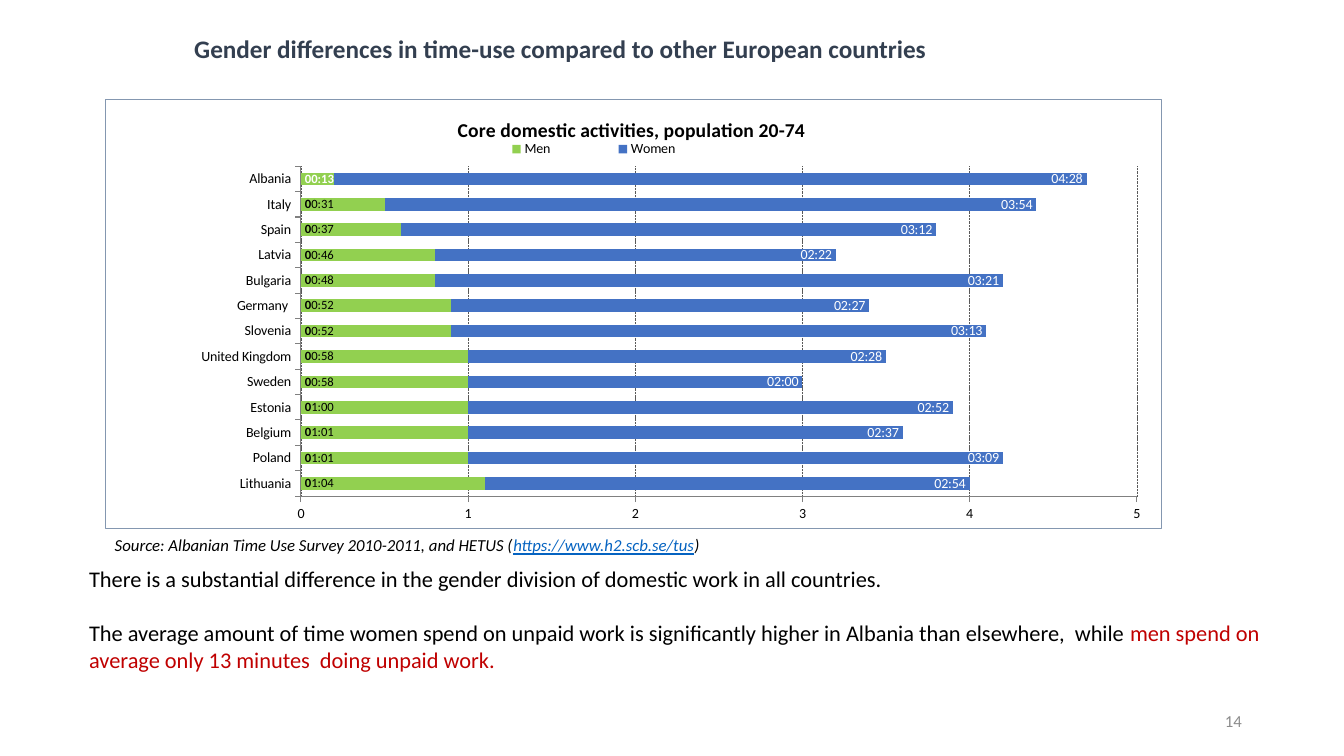
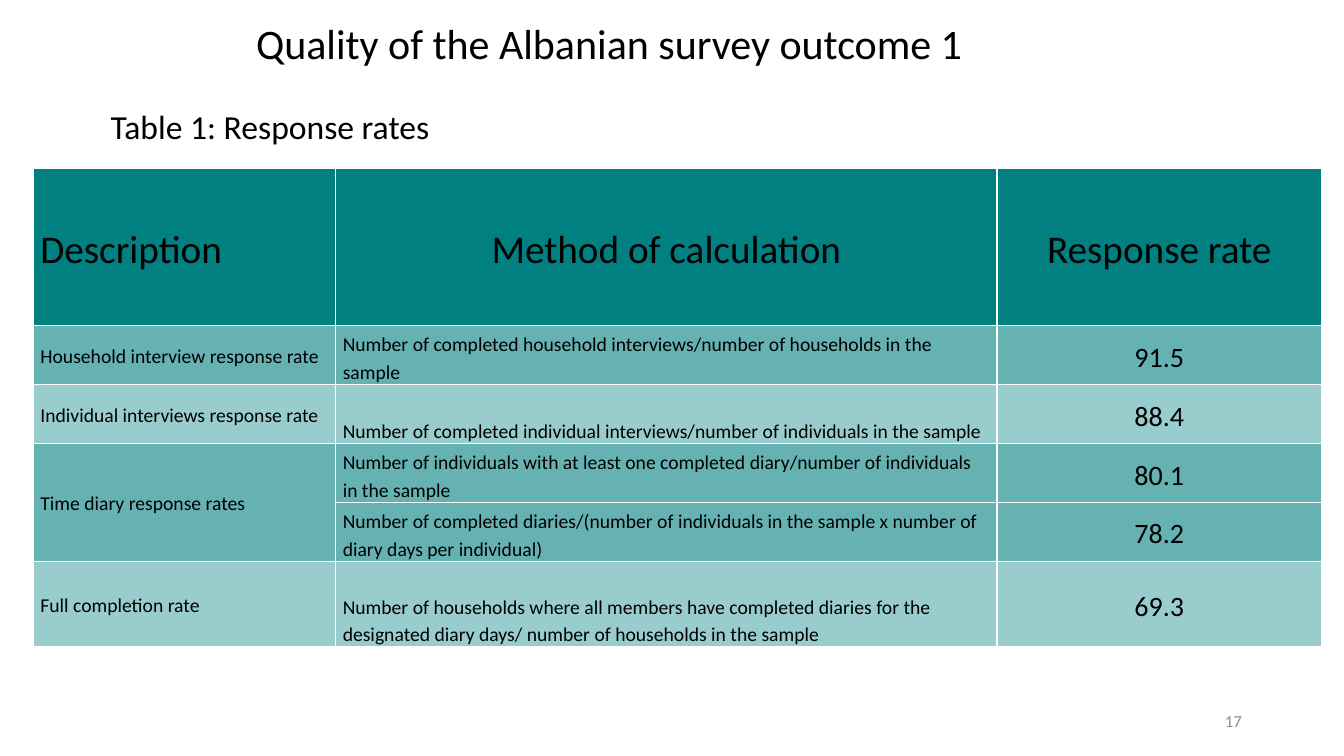
from dataclasses import dataclass
from typing import NamedTuple

import lxml.etree
import pptx
import pptx.chart.data
import pptx.dml.color
import pptx.enum.chart
import pptx.enum.dml
import pptx.enum.text
import pptx.oxml
import pptx.oxml.ns
import pptx.util

Align = pptx.enum.text.PP_ALIGN
Anchor = pptx.enum.text.MSO_ANCHOR
LabelPos = pptx.enum.chart.XL_LABEL_POSITION
qn = pptx.oxml.ns.qn
Pt = pptx.util.Pt


@dataclass(frozen=True)
class Theme:
    font: str = "Calibri"
    ink: str = "000000"
    white: str = "FFFFFF"
    slate: str = "333F50"
    muted: str = "8C8C8C"
    link: str = "0563C1"
    alert: str = "C00000"
    teal: str = "008080"
    men: str = "92D050"
    women: str = "4472C4"
    frame: str = "8497B0"
    axis: str = "808080"
    grid: str = "595959"
    label: float = 9
    chart: float = 10
    small: float = 12
    cell: float = 14
    body: float = 16
    heading: float = 18
    rate: float = 20
    caption: float = 24
    header: float = 28
    title: float = 30


THEME = Theme()


class Box(NamedTuple):
    """Left, top, width and height in percent of the slide."""
    x: float
    y: float
    w: float
    h: float


class Run(NamedTuple):
    text: str
    size: float
    color: str = THEME.ink
    bold: bool = False
    italic: bool = False
    underline: bool = False


class Country(NamedTuple):
    name: str
    men: float
    men_label: str
    women: float
    women_label: str


class Rate(NamedTuple):
    description: str
    method: str
    value: str
    opacity: int


PAGE_NUMBER = Box(70.65, 92.67, 22.5, 5.33)

COUNTRIES = [
    Country("Lithuania", 1.1, "01:04", 2.9, "02:54"),
    Country("Poland", 1, "01:01", 3.2, "03:09"),
    Country("Belgium", 1, "01:01", 2.6, "02:37"),
    Country("Estonia", 1, "01:00", 2.9, "02:52"),
    Country("Sweden", 1, "00:58", 2, "02:00"),
    Country("United Kingdom", 1, "00:58", 2.5, "02:28"),
    Country("Slovenia", 0.9, "00:52", 3.2, "03:13"),
    Country("Germany ", 0.9, "00:52", 2.5, "02:27"),
    Country("Bulgaria", 0.8, "00:48", 3.4, "03:21"),
    Country("Latvia", 0.8, "00:46", 2.4, "02:22"),
    Country("Spain", 0.6, "00:37", 3.2, "03:12"),
    Country("Italy", 0.5, "00:31", 3.9, "03:54"),
    Country("Albania", 0.2, "00:13", 4.5, "04:28"),
]

HEADERS = ("Description", "Method of calculation", "Response rate")
RATES = [
    Rate("Household interview response rate",
         "Number of completed household interviews/number of households in the sample", "91.5", 60),
    Rate("Individual interviews response rate",
         "Number of completed individual interviews/number of individuals in the sample", "88.4", 40),
    Rate("Time diary response rates",
         "Number of individuals with at least one completed diary/number of individuals in the sample",
         "80.1", 60),
    Rate("",
         "Number of completed diaries/(number of individuals in the sample x number of diary days "
         "per individual)", "78.2", 60),
    Rate("Full completion rate",
         "Number of households where all members have completed diaries for the designated diary "
         "days/ number of households in the sample", "69.3", 40),
]
COLUMNS = (22.5, 49.2, 24.15)
ROWS = (20.8, 7.8, 7.8, 7.8, 7.8, 11.33)


def rgb(color: str) -> pptx.dml.color.RGBColor:
    return pptx.dml.color.RGBColor.from_string(color)


def across(prs, share: float) -> int:
    return round(prs.slide_width * share / 100)


def down(prs, share: float) -> int:
    return round(prs.slide_height * share / 100)


def emu(prs, box: Box) -> tuple[int, int, int, int]:
    return across(prs, box.x), down(prs, box.y), across(prs, box.w), down(prs, box.h)


def style(font, run: Run) -> None:
    font.name, font.size = THEME.font, Pt(run.size)
    font.bold, font.italic, font.underline = run.bold, run.italic, run.underline
    font.color.rgb = rgb(run.color)


def write(p, *runs: Run, align=Align.LEFT) -> None:
    p.alignment = align
    for run in runs:
        r = p.add_run()
        r.text = run.text
        style(r.font, run)


def place(prs, sp, box: Box, anchor=Anchor.TOP, wrap: bool = True):
    """Move a text shape, fix its frame and return the frame."""
    sp.left, sp.top, sp.width, sp.height = emu(prs, box)
    tf = sp.text_frame
    tf.word_wrap = wrap
    tf.auto_size = pptx.enum.text.MSO_AUTO_SIZE.NONE
    tf.vertical_anchor = anchor
    return tf


def add_text(prs, s, box: Box, *runs: Run, align=Align.LEFT, anchor=Anchor.TOP, wrap=True) -> None:
    tf = place(prs, s.shapes.add_textbox(0, 0, 0, 0), box, anchor, wrap)
    write(tf.paragraphs[0], *runs, align=align)


def add_slide(prs, layout: int, number: str, box: Box, title: Run, anchor=Anchor.TOP):
    s = prs.slides.add_slide(prs.slide_layouts[layout])
    tf = place(prs, s.shapes.title, box, anchor)
    write(tf.paragraphs[0], title)
    add_text(prs, s, PAGE_NUMBER, Run(number, THEME.small, THEME.muted),
             align=Align.RIGHT, anchor=Anchor.MIDDLE)
    return s


def manual_layout(inner: bool = False, **shares: float):
    """Build a chart layout element from shares of the chart's size."""
    layout = lxml.etree.Element(qn("c:layout"))
    manual = lxml.etree.SubElement(layout, qn("c:manualLayout"))
    settings = {"layoutTarget": "inner"} if inner else {}
    settings |= {"xMode": "edge", "yMode": "edge", **shares}
    for tag, value in settings.items():
        lxml.etree.SubElement(manual, qn(f"c:{tag}")).set("val", str(value))
    return layout


def arrange_chart(chart) -> None:
    """Fix the title, plot and legend positions and frame the chart."""
    space = chart._chartSpace
    for old in space.xpath("c:chart/*/c:layout"):
        old.getparent().remove(old)
    space.xpath("c:chart/c:title/c:tx")[0].addnext(manual_layout(x=0.33, y=0.03))
    space.xpath("c:chart/c:plotArea")[0].insert(
        0, manual_layout(inner=True, x=0.185, y=0.155, w=0.792, h=0.77))
    space.xpath("c:chart/c:legend/c:legendPos")[0].addnext(
        manual_layout(x=0.325, y=0.085, w=0.275, h=0.06))
    space.xpath("c:chart")[0].addnext(pptx.oxml.parse_xml(
        f'<c:spPr {pptx.oxml.ns.nsdecls("c", "a")}>'
        f'<a:solidFill><a:srgbClr val="{THEME.white}"/></a:solidFill>'
        f'<a:ln w="{Pt(0.75)}"><a:solidFill><a:srgbClr val="{THEME.frame}"/></a:solidFill></a:ln>'
        '</c:spPr>'))


def label_point(series, index: int, position, *runs: Run) -> None:
    label = series.points[index].data_label
    write(label.text_frame.paragraphs[0], *runs, align=Align.CENTER)
    label.position = position


def add_time_chart(prs, s, box: Box) -> None:
    data = pptx.chart.data.CategoryChartData(number_format="0.0")
    data.categories = [c.name for c in COUNTRIES]
    data.add_series("Men", [c.men for c in COUNTRIES])
    data.add_series("Women", [c.women for c in COUNTRIES])
    chart = s.shapes.add_chart(
        pptx.enum.chart.XL_CHART_TYPE.BAR_STACKED, *emu(prs, box), data).chart
    style(chart.font, Run("", THEME.chart))
    chart.has_title = True
    write(chart.chart_title.text_frame.paragraphs[0],
          Run("Core domestic activities, population 20-74", THEME.cell, bold=True),
          align=Align.CENTER)
    chart.has_legend = True
    chart.legend.position = pptx.enum.chart.XL_LEGEND_POSITION.BOTTOM
    chart.legend.include_in_layout = False

    plot = chart.plots[0]
    plot.gap_width, plot.overlap, plot.vary_by_categories = 100, 100, False
    men, women = plot.series
    for series, color in ((men, THEME.men), (women, THEME.women)):
        series.format.fill.solid()
        series.format.fill.fore_color.rgb = rgb(color)
    for i, c in enumerate(COUNTRIES):
        if c.name == "Albania":
            runs = [Run(c.men_label, THEME.label, THEME.white, bold=True)]
        else:
            runs = [Run(c.men_label[0], THEME.label, bold=True), Run(c.men_label[1:], THEME.label)]
        label_point(men, i, LabelPos.INSIDE_BASE, *runs)
        label_point(women, i, LabelPos.INSIDE_END, Run(c.women_label, THEME.chart, THEME.white))

    values = chart.value_axis
    values.minimum_scale, values.maximum_scale, values.major_unit = 0, 5, 1
    values.tick_labels.number_format = "0"
    values.tick_labels.number_format_is_linked = False
    values.has_major_gridlines = True
    grid = values.major_gridlines.format.line
    grid.width, grid.color.rgb = Pt(0.25), rgb(THEME.grid)
    grid.dash_style = pptx.enum.dml.MSO_LINE.SQUARE_DOT
    for axis in (values, chart.category_axis):
        axis.major_tick_mark = pptx.enum.chart.XL_TICK_MARK.OUTSIDE
        axis.format.line.color.rgb = rgb(THEME.axis)
    arrange_chart(chart)


def fill_cell(cell, run: Run, opacity: int, align=Align.LEFT, anchor=Anchor.MIDDLE) -> None:
    cell.margin_left = cell.margin_right = pptx.util.Inches(0.07)
    cell.margin_top = cell.margin_bottom = 0
    cell.vertical_anchor = anchor
    tc_pr = cell._tc.get_or_add_tcPr()
    for side in "LRTB":
        tc_pr.append(pptx.oxml.parse_xml(
            f'<a:ln{side} {pptx.oxml.ns.nsdecls("a")} w="{Pt(1)}"><a:solidFill>'
            f'<a:srgbClr val="{THEME.white}"/></a:solidFill></a:ln{side}>'))
    cell.fill.solid()
    cell.fill.fore_color.rgb = rgb(THEME.teal)
    if opacity < 100:
        color = tc_pr.find(qn("a:solidFill")).find(qn("a:srgbClr"))
        lxml.etree.SubElement(color, qn("a:alpha")).set("val", str(opacity * 1000))
    if run.text:
        p = cell.text_frame.paragraphs[0]
        p.line_spacing, p.space_after = 1.15, Pt(10)
        write(p, run, align=align)


def add_rate_table(prs, s, x: float, y: float) -> None:
    box = Box(x, y, sum(COLUMNS), sum(ROWS))
    table = s.shapes.add_table(len(ROWS), len(COLUMNS), *emu(prs, box)).table
    for column, share in zip(table.columns, COLUMNS):
        column.width = across(prs, share)
    for row, share in zip(table.rows, ROWS):
        row.height = down(prs, share)
    for j, header in enumerate(HEADERS):
        fill_cell(table.cell(0, j), Run(header, THEME.header), 100, Align.CENTER if j else Align.LEFT)
    for i, rate in enumerate(RATES, 1):
        fill_cell(table.cell(i, 0), Run(rate.description, THEME.cell), rate.opacity)
        fill_cell(table.cell(i, 1), Run(rate.method, THEME.cell), rate.opacity, anchor=Anchor.BOTTOM)
        fill_cell(table.cell(i, 2), Run(rate.value, THEME.rate), rate.opacity, Align.CENTER)
        if not rate.description:
            table.cell(i - 1, 0).merge(table.cell(i, 0))


def add_findings(prs, s, box: Box) -> None:
    tf = place(prs, s.placeholders[1], box)
    findings = [
        [Run("There is a substantial difference in the gender division of domestic work in all "
             "countries.", THEME.body)],
        [Run("The average amount of time women spend on unpaid work is significantly higher in "
             "Albania than elsewhere,  while ", THEME.body),
         Run("men spend on average only 13 minutes  doing unpaid work.", THEME.body, THEME.alert)],
    ]
    for i, runs in enumerate(findings):
        p = tf.add_paragraph() if i else tf.paragraphs[0]
        p_pr = p._p.get_or_add_pPr()
        p_pr.set("marL", "0")
        p_pr.set("indent", "0")
        lxml.etree.SubElement(p_pr, qn("a:buNone"))
        p.space_before = Pt(19.5 if i else 0)
        write(p, *runs)


def build_time_use(prs) -> None:
    s = add_slide(prs, 1, "14", Box(12.2, 3.75, 82.65, 5.33),
                  Run("Gender differences in time-use compared to other European countries",
                      THEME.heading, THEME.slate, bold=True))
    s.shapes.title.text_frame.margin_left = pptx.util.Inches(0.3)
    add_time_chart(prs, s, Box(7.83, 13.15, 78.6, 56.8))
    add_text(prs, s, Box(7.8, 70.13, 45.75, 4),
             Run("Source: Albanian Time Use Survey 2010-2011, and HETUS (", THEME.small, italic=True),
             Run("https://www.h2.scb.se/tus", THEME.small, THEME.link, italic=True, underline=True),
             Run(")", THEME.small, italic=True), wrap=False)
    add_findings(prs, s, Box(5.88, 74.1, 90.53, 15.73))


def build_response_rates(prs) -> None:
    s = add_slide(prs, 5, "17", Box(18.3, 1.07, 78.3, 10),
                  Run("Quality of the Albanian survey outcome 1", THEME.title), Anchor.MIDDLE)
    s.shapes.title.text_frame.paragraphs[0].line_spacing = 0.9
    add_text(prs, s, Box(7.5, 13.33, 25.43, 6.67),
             Run("Table 1: Response rates", THEME.caption), wrap=False)
    add_rate_table(prs, s, 2.48, 22.27)


def main() -> None:
    prs = pptx.Presentation()
    prs.slide_width, prs.slide_height = pptx.util.Inches(13.33), pptx.util.Inches(7.5)
    build_time_use(prs)
    build_response_rates(prs)
    prs.save("out.pptx")


if __name__ == "__main__":
    main()
